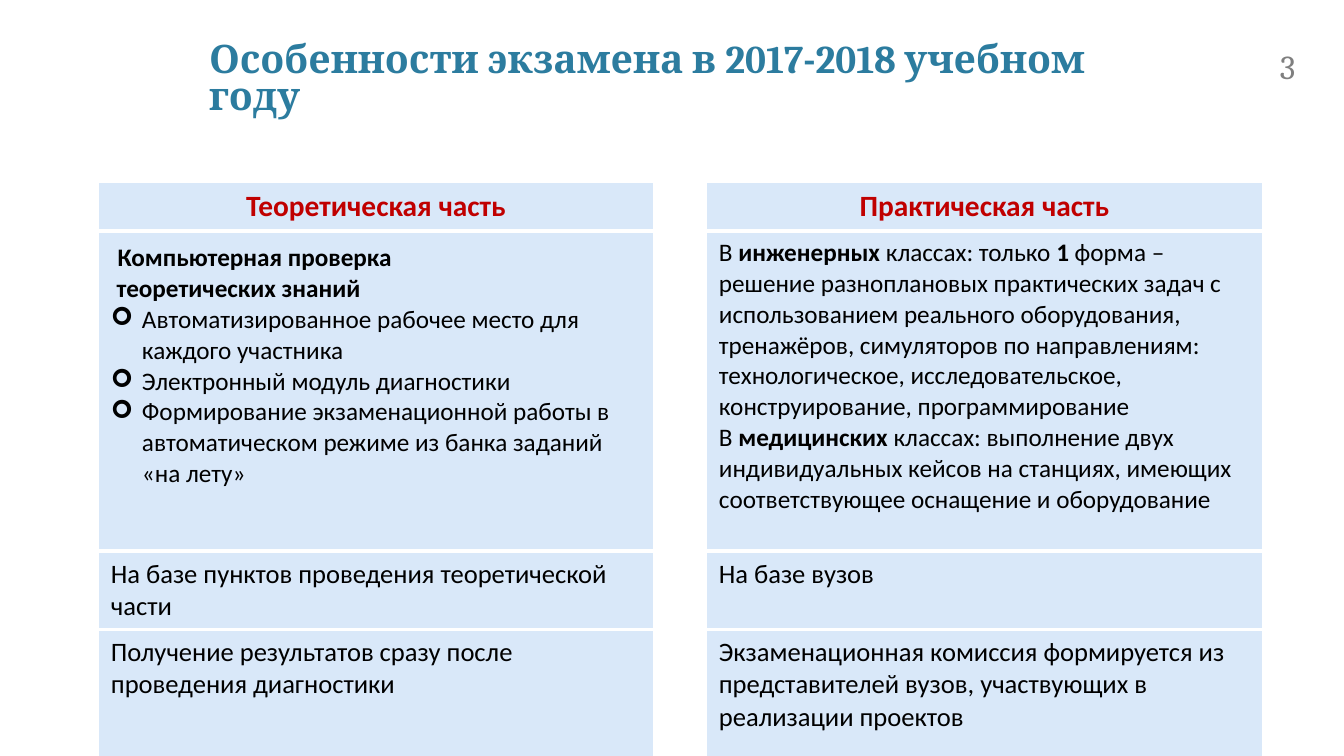
from lxml import etree
from pptx import Presentation
from pptx.dml.color import RGBColor as RGB
from pptx.enum.text import MSO_ANCHOR as Anchor, MSO_AUTO_SIZE as Fit, PP_ALIGN as Align
from pptx.oxml.ns import qn
from pptx.util import Pt

PX = 914400 / 100.8
TEAL = RGB(0x2C, 0x7C, 0x9F)
GREY = RGB(0x7F, 0x7F, 0x7F)
RED = RGB(0xC0, 0x00, 0x00)
BLACK = RGB(0, 0, 0)
WHITE = RGB(0xFF, 0xFF, 0xFF)
BLUE = RGB(0xD9, 0xE8, 0xF9)


def px(*nums):
    return [round(n * PX) for n in nums]


def write(frame, text, size=18, color=BLACK, font="Calibri", bold=False,
          align=None, bullet=None, gap=None, lead=None):
    """Add one paragraph; parts between asterisks are bold."""
    para = frame.paragraphs[0]
    if para.runs:
        para = frame.add_paragraph()
    if bullet:
        prop = para._p.get_or_add_pPr()
        step = px(31)[0]
        prop.set("marL", str(step))
        prop.set("indent", str(-step))
        etree.SubElement(prop, qn("a:buFont"), typeface="Wingdings")
        etree.SubElement(prop, qn("a:buChar"), char=bullet)
    if align is not None:
        para.alignment = align
    if gap:
        para.line_spacing = gap
    parts = [(part, size, bold or i % 2 == 1) for i, part in enumerate(text.split("*"))]
    if lead:
        parts.insert(0, (" ", lead, bold))
    for part, pts, heavy in parts:
        run = para.add_run()
        run.text = part
        run.font.size = Pt(pts)
        run.font.name = font
        run.font.bold = heavy
        run.font.color.rgb = color


deck = Presentation()
deck.slide_width, deck.slide_height = px(1344, 756)
slide = deck.slides.add_slide(deck.slide_layouts[5])

# Title
title = slide.shapes.title
title.left, title.top, title.width, title.height = px(196, 36, 966, 62)
frame = title.text_frame
frame.word_wrap = True
frame.auto_size = Fit.NONE
frame.vertical_anchor = Anchor.TOP
frame.margin_left, frame.margin_right, frame.margin_top, frame.margin_bottom = px(13, 13, 7, 7)
write(frame, "Особенности экзамена в 2017-2018 учебном году", size=28, color=TEAL,
      font="Cambria", bold=True, align=Align.LEFT, gap=0.8)

# Table grid
wide = [556, 52, 557]
high = [48, 320, 78, 61, 81]
table = slide.shapes.add_table(5, 3, *px(98, 181, sum(wide), sum(high))).table
table.first_row = table.horz_banding = False
for col, size in zip(table.columns, px(*wide)):
    col.width = size
for row, size in zip(table.rows, px(*high)):
    row.height = size

# Cell borders, margins and fills
for y in range(5):
    for x in range(3):
        cell = table.cell(y, x)
        prop = cell._tc.get_or_add_tcPr()
        for side, pts in zip("LRTB", (1, 1, 3, 3)):
            line = etree.SubElement(prop, qn("a:ln" + side), w=str(Pt(pts)))
            ink = etree.SubElement(line, qn("a:solidFill"))
            etree.SubElement(ink, qn("a:srgbClr"), val=str(WHITE))
        cell.margin_left, cell.margin_right, cell.margin_top, cell.margin_bottom = px(13, 13, 7, 7)
        if x == 1:
            cell.fill.background()
        else:
            cell.fill.solid()
            cell.fill.fore_color.rgb = BLUE
table.cell(1, 1).merge(table.cell(3, 1))
for x in (0, 2):
    table.cell(3, x).merge(table.cell(4, x))

# Headings and short rows
for x, head, place, result in [
    (0, "Теоретическая часть", "На базе пунктов проведения теоретической части",
     "Получение результатов сразу после проведения диагностики"),
    (2, "Практическая часть", "На базе вузов",
     "Экзаменационная комиссия формируется из представителей вузов, "
     "участвующих в реализации проектов"),
]:
    write(table.cell(0, x).text_frame, head, size=21, color=RED, bold=True, align=Align.CENTER)
    write(table.cell(2, x).text_frame, place, size=19)
    write(table.cell(3, x).text_frame, result, size=19)

# Theory details
theory = table.cell(1, 0).text_frame
write(theory, "Компьютерная проверка", bold=True, align=Align.JUSTIFY, lead=21)
write(theory, " теоретических знаний", bold=True, align=Align.JUSTIFY)
for item in ["Автоматизированное рабочее место для каждого участника",
             "Электронный модуль диагностики",
             "Формирование экзаменационной работы в автоматическом режиме "
             "из банка заданий «на лету»"]:
    write(theory, item, bullet="➢")

# Practice details
practice = table.cell(1, 2).text_frame
write(practice, "В *инженерных* классах: только *1* форма – решение разноплановых "
      "практических задач с использованием реального оборудования, тренажёров, "
      "симуляторов по направлениям: технологическое, исследовательское, "
      "конструирование, программирование")
write(practice, "В *медицинских* классах: выполнение двух индивидуальных кейсов на "
      "станциях, имеющих соответствующее оснащение и оборудование")

# Page number
page = slide.shapes.add_textbox(*px(1270, 41, 74, 40)).text_frame
page.word_wrap = True
write(page, "3", size=24, color=GREY, font="Cambria")

deck.save("out.pptx")
